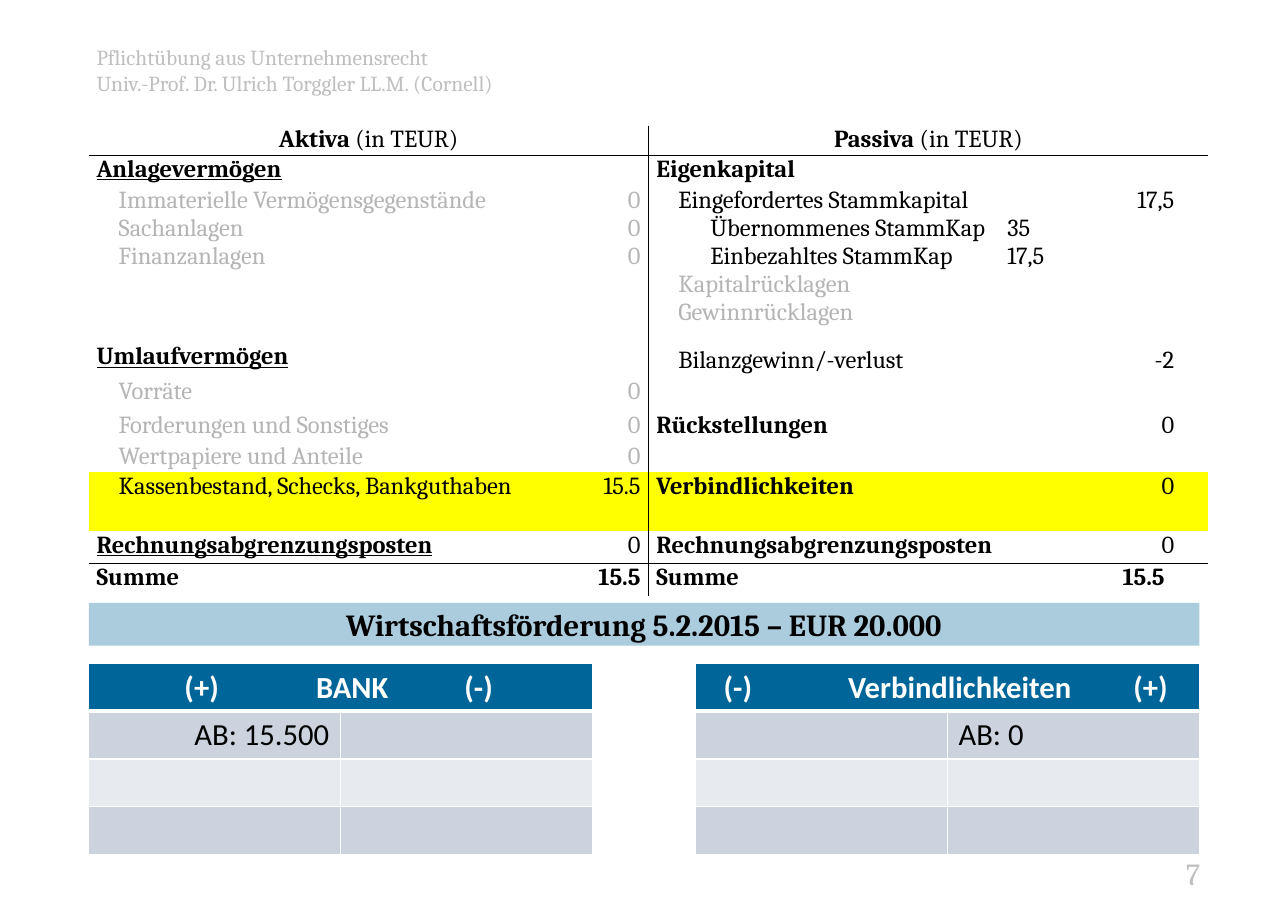
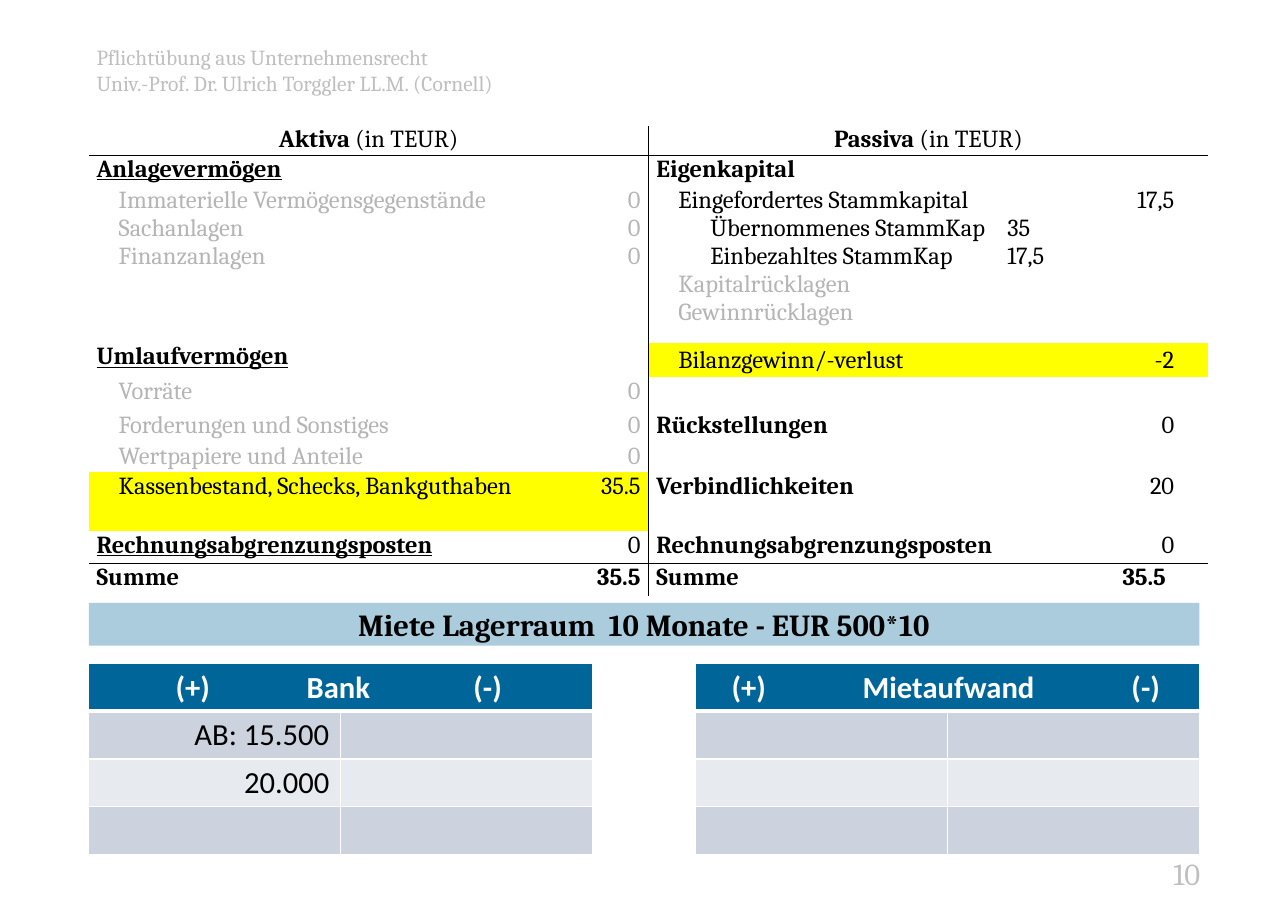
from lxml.etree import SubElement
from pptx import Presentation
from pptx.dml.color import RGBColor
from pptx.enum.text import MSO_ANCHOR as Anchor, MSO_AUTO_SIZE as AutoSize, PP_ALIGN as Align
from pptx.oxml.ns import qn
from pptx.util import Pt

color = RGBColor.from_string
BLACK, WHITE, GREY, PALE = "000000", "FFFFFF", "B5B5B5", "BFBFBF"
YELLOW, BANNER, BLUE = "FFFF00", "AACCDD", "006699"
STRIPES = ["CCD3DE", "E7EAEF"]
PLAIN_TABLE = "{2D5ABB26-0587-4C30-8999-92F81FD0307C}"
LEFT_EDGE = 58

STYLES = {
    "group": dict(bold=True, underline=True),
    "bold": dict(bold=True),
    "plain": dict(),
    "faint": dict(tint=GREY),
    "item": dict(indent=14.4),
    "faint item": dict(indent=14.4, tint=GREY),
    "detail": dict(indent=35.3, tabs=[(194, "l")]),
}


def write(para, text, size=16, tint=BLACK, name="Cambria", bold=False,
          underline=False, align=Align.LEFT, indent=0, tabs=()):
    props = para._p.get_or_add_pPr()
    if indent:
        props.set("marL", str(Pt(indent)))
    if tabs:
        stops = SubElement(props, qn("a:tabLst"))
        for position, kind in tabs:
            SubElement(stops, qn("a:tab"), pos=str(Pt(position)), algn=kind)
    para.alignment = align
    para.font.size = Pt(size)
    para.font.name = name
    para.font.bold = bold
    para.font.underline = underline
    para.font.color.rgb = color(tint)
    if text:
        para.add_run().text = text


def finish_cell(cell, fill, edges):
    props = cell._tc.get_or_add_tcPr()
    for side in "LRTB":
        if side in edges:
            tint, width = edges[side]
            line = SubElement(props, qn(f"a:ln{side}"), w=str(Pt(width)))
            solid = SubElement(line, qn("a:solidFill"))
            SubElement(solid, qn("a:srgbClr"), val=tint)
    cell.fill.solid()
    cell.fill.fore_color.rgb = color(fill)


SLIDES = [
    dict(
        number="7", title="Wirtschaftsförderung 5.2.2015 – EUR 20.000",
        total="15.5", debt="0", highlights={(9, 0), (9, 1), (8, 2), (8, 3)},
        ledgers=[
            (["(+)", "BANK", "(-)"], [66.6, 165, 247.6], {(1, 0): "AB: 15.500"}),
            (["(-)", "Verbindlichkeiten", "(+)"], [20.3, 165.3, 290], {(1, 1): "AB: 0"}),
        ],
    ),
    dict(
        number="10", title="Miete Lagerraum  10 Monate - EUR 500*10",
        total="35.5", debt="20", highlights={(9, 0), (9, 1), (3, 2), (3, 3)},
        ledgers=[
            (["(+)", "Bank", "(-)"], [60.8, 156, 253.5],
             {(1, 0): "AB: 15.500", (2, 0): "20.000"}),
            (["(+)", "Mietaufwand", "(-)"], [27.4, 158, 286.8], {}),
        ],
    ),
]

ROW_HEIGHTS = [19.4, 20.1, 102.6, 22.4, 22.4, 20.1, 0, 19.6, 0, 38.4, 21.1, 21.3]
COLUMN_WIDTHS = [304.6, 61.2, 304.6, 61.2]
LAST_ROW = len(ROW_HEIGHTS) - 1
TALL_CELLS = [(row, column) for row, first in [(5, 0), (6, 2), (7, 0), (8, 2)]
              for column in (first, first + 1)]

deck = Presentation()
deck.slide_width, deck.slide_height = Pt(841.68), Pt(595.44)

for data in SLIDES:
    page = deck.slides.add_slide(deck.slide_layouts[5])

    header = page.shapes.add_textbox(Pt(56), Pt(25.2), Pt(601), Pt(51)).text_frame
    header.word_wrap = True
    write(header.paragraphs[0], "Pflichtübung aus Unternehmensrecht", 14, PALE)
    write(header.add_paragraph(), "Univ.-Prof. Dr. Ulrich Torggler LL.M. (Cornell)", 14, PALE)

    footer = page.shapes.add_textbox(Pt(621.4), Pt(555), Pt(170), Pt(31.5)).text_frame
    footer.word_wrap = True
    write(footer.paragraphs[0], data["number"], 20, PALE, align=Align.RIGHT)

    title = page.shapes.title
    title.left, title.top, title.width, title.height = Pt(LEFT_EDGE), Pt(394), Pt(725.8), Pt(28)
    title.fill.solid()
    title.fill.fore_color.rgb = color(BANNER)
    title.text_frame.auto_size = AutoSize.NONE
    title.text_frame.vertical_anchor = Anchor.MIDDLE
    write(title.text_frame.paragraphs[0], data["title"], 20, bold=True, align=Align.CENTER)

    for index, (labels, centers, entries) in enumerate(data["ledgers"]):
        ledger = page.shapes.add_table(
            4, 2, Pt(LEFT_EDGE + index * 396.7), Pt(433.6), Pt(329), Pt(124.4)).table
        ledger.cell(0, 0).merge(ledger.cell(0, 1))
        for row in range(4):
            for column in range(2):
                cell = ledger.cell(row, column)
                para = cell.text_frame.paragraphs[0]
                edges = dict.fromkeys("LRTB", (WHITE, 1))
                if row == 0:
                    edges["B"] = (WHITE, 3)
                    text = "".join("\t" + label for label in labels) if column == 0 else ""
                    write(para, text, 20, WHITE, "Calibri", bold=True,
                          tabs=[(center, "ctr") for center in centers])
                else:
                    if row == 1:
                        edges["T"] = (WHITE, 3)
                    write(para, entries.get((row, column), ""), 20, name="Calibri",
                          align=Align.LEFT if column else Align.RIGHT)
                finish_cell(cell, BLUE if row == 0 else STRIPES[(row - 1) % 2], edges)

    total, debt = data["total"], data["debt"]
    balance_rows = [
        [[], [], [], []],
        [[("group", "Anlagevermögen")], [], [("bold", "Eigenkapital")], []],
        [
            [("faint item", "Immaterielle Vermögensgegenstände"),
             ("faint item", "Sachanlagen"), ("faint item", "Finanzanlagen")],
            [("faint", "0")] * 3,
            [("item", "Eingefordertes Stammkapital"),
             ("detail", "Übernommenes StammKap\t35"),
             ("detail", "Einbezahltes StammKap\t17,5"),
             ("faint item", "Kapitalrücklagen"), ("faint item", "Gewinnrücklagen")],
            [("plain", "17,5")],
        ],
        [[("group", "Umlaufvermögen")], [],
         [("item", "Bilanzgewinn/-verlust")], [("plain", "-2")]],
        [[("faint item", "Vorräte")], [("faint", "0")], [], []],
        [[("faint item", "Forderungen und Sonstiges")], [("faint", "0")],
         [("bold", "Rückstellungen")], [("plain", "0")]],
        [[], [], [], []],
        [[("faint item", "Wertpapiere und Anteile")], [("faint", "0")], [], []],
        [[], [], [("bold", "Verbindlichkeiten")], [("plain", debt)]],
        [[("item", "Kassenbestand, Schecks, Bankguthaben")], [("plain", total)], [], []],
        [[("group", "Rechnungsabgrenzungsposten")], [("plain", "0")],
         [("bold", "Rechnungsabgrenzungsposten")], [("plain", "0")]],
        [[("bold", "Summe")], [("bold", total)], [("bold", "Summe")], [("bold", total)]],
    ]

    balance = page.shapes.add_table(
        len(ROW_HEIGHTS), 4, Pt(LEFT_EDGE), Pt(82.1),
        Pt(sum(COLUMN_WIDTHS)), Pt(sum(ROW_HEIGHTS))).table
    for column, width in enumerate(COLUMN_WIDTHS):
        balance.columns[column].width = Pt(width)
    for row, height in enumerate(ROW_HEIGHTS):
        balance.rows[row].height = Pt(height)
    for row, column in TALL_CELLS:
        balance.cell(row, column).merge(balance.cell(row + 1, column))

    for column, heading in [(0, "Aktiva "), (2, "Passiva ")]:
        balance.cell(0, column).merge(balance.cell(0, column + 1))
        para = balance.cell(0, column).text_frame.paragraphs[0]
        write(para, heading, align=Align.CENTER)
        para.runs[0].font.bold = True
        para.add_run().text = "(in TEUR)"

    for row, contents in enumerate(balance_rows):
        for column, lines in enumerate(contents):
            cell = balance.cell(row, column)
            cell.margin_top = cell.margin_bottom = 0
            cell.margin_left = cell.margin_right = Pt(5.2)
            if column == 3 and row < LAST_ROW:
                cell.margin_right = Pt(22.3)
            if row == 3 and column >= 2:
                cell.vertical_anchor = Anchor.MIDDLE
            align = Align.RIGHT if column % 2 else Align.LEFT
            if row == LAST_ROW and column == 3:
                align = Align.LEFT
            frame = cell.text_frame
            if row and not lines:
                write(frame.paragraphs[0], "")
            for index, (style, text) in enumerate(lines):
                para = frame.add_paragraph() if index else frame.paragraphs[0]
                write(para, text, align=align, **STYLES[style])

            edges = {}
            if column == 1 or (row == 0 and column == 0):
                edges["R"] = (BLACK, 0.75)
            if row in (0, LAST_ROW - 1):
                edges["B"] = (BLACK, 0.75)
            finish_cell(cell, YELLOW if (row, column) in data["highlights"] else WHITE, edges)

    for shape in page.shapes:
        if shape.has_table:
            shape.table._tbl.tblPr.find(qn("a:tableStyleId")).text = PLAIN_TABLE

deck.save("out.pptx")
